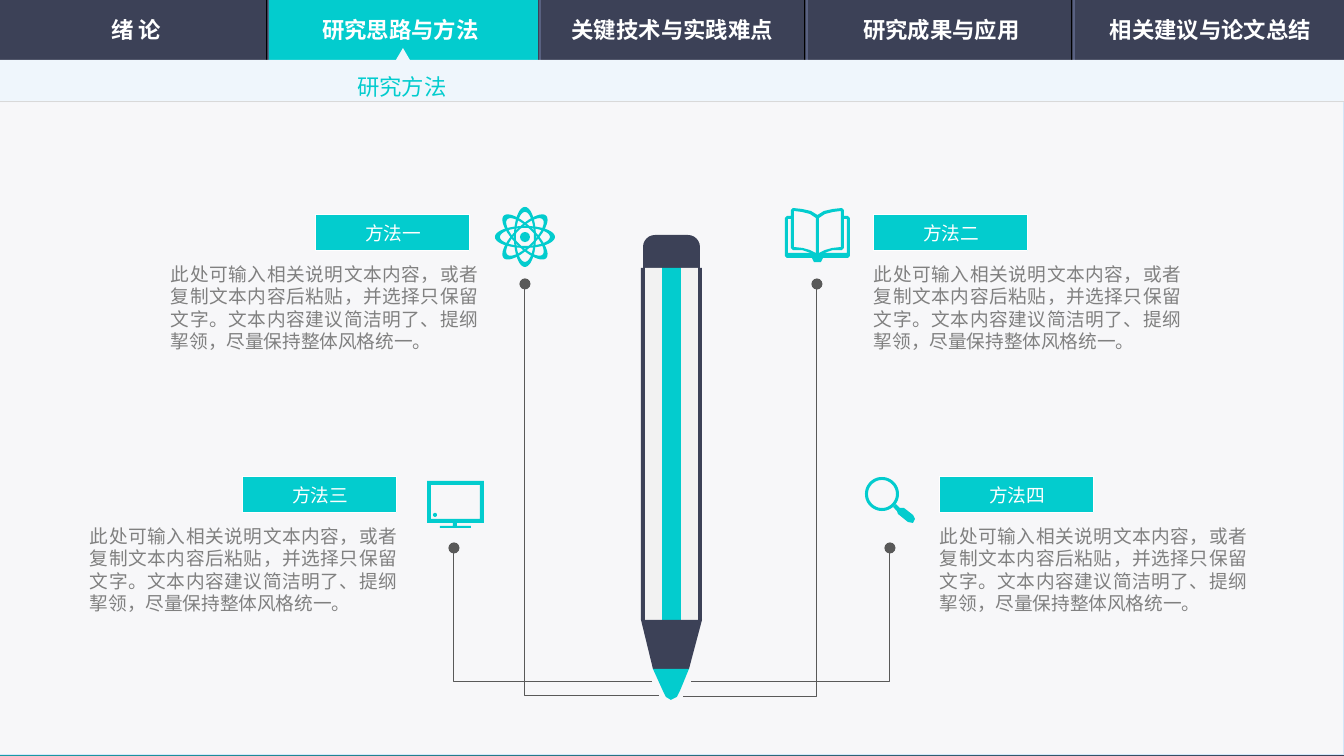
import math
from dataclasses import dataclass

from lxml import etree
from pptx import Presentation
from pptx import util as u
from pptx.dml.color import RGBColor
from pptx.enum import shapes, text
from pptx.oxml import ns

SCALE = 914400 / 134.4  # EMU per px


@dataclass(frozen=True)
class Theme:
    cyan: str = "03CCCE"
    navy: str = "3C4157"
    slate: str = "596181"
    dusk: str = "3B445B"
    panel: str = "F7F7F9"
    panel_edge: str = "D4E7F9"
    band: str = "EFF6FC"
    rule: str = "D9D9D9"
    wire: str = "595959"
    barrel: str = "F2F2F2"
    grey: str = "808080"
    white: str = "FFFFFF"
    black: str = "000000"
    heading: float = 12
    body: float = 10
    cjk: str = "Noto Sans CJK SC"
    body_font: str = "Arial"
    label_font: str = "Arial Narrow"


T = Theme()
RECT = shapes.MSO_SHAPE.RECTANGLE
ROUND = shapes.MSO_SHAPE.ROUNDED_RECTANGLE
OVAL = shapes.MSO_SHAPE.OVAL
CENTER = text.PP_ALIGN.CENTER
MIDDLE = text.MSO_ANCHOR.MIDDLE

# Tab name, left edge of its label
TABS = (("绪 论", 3), ("研究思路与方法", 267), ("关键技术与实践难点", 539),
        ("研究成果与应用", 808), ("相关建议与论文总结", 1077))
DIVIDERS = (267, 538, 805, 1072)

DETAIL = ("此处可输入相关说明文本内容，或者复制文本内容后粘贴，并选择只保留文字。"
          "文本内容建议简洁明了、提纲挈领，尽量保持整体风格统一。")
# Name, label left, detail left, top, lead line from dot to pencil
METHODS = (
    ("方法一", 316, 171, 215, ((525, 284), (525, 696), (659, 696))),
    ("方法二", 874, 874, 215, ((817, 284), (817, 697), (683, 697))),
    ("方法三", 243, 90, 477, ((454, 548), (454, 682), (652, 682))),
    ("方法四", 940, 940, 477, ((890, 548), (890, 682), (691, 682))),
)


def px(n):
    return u.Emu(round(n * SCALE))


def rgb(code):
    return RGBColor.from_string(code)


def paint(sp, fill=None, line=None, width=0.5):
    sp.shadow.inherit = False
    if fill:
        sp.fill.solid()
        sp.fill.fore_color.rgb = rgb(fill)
    else:
        sp.fill.background()
    if line:
        sp.line.color.rgb = rgb(line)
        sp.line.width = u.Pt(width)
    else:
        sp.line.fill.background()


def add_box(s, kind, box, fill=None, line=None, radius=0):
    sp = s.shapes.add_shape(kind, *map(px, box))
    if kind == ROUND:
        sp.adjustments[0] = radius
    paint(sp, fill, line)
    return sp


def add_outline(s, contours, fill=None, line=None, closed=True):
    fb = None
    for points in contours:
        start, *rest = [(px(x), px(y)) for x, y in points]
        if fb is None:
            fb = s.shapes.build_freeform(*start, scale=1.0)
        else:
            fb.move_to(*start)
        fb.add_line_segments(rest, close=closed)
    sp = fb.convert_to_shape()
    paint(sp, fill, line)
    return sp


def add_line(s, x1, y1, x2, y2, color, width=0.5):
    cx = s.shapes.add_connector(shapes.MSO_CONNECTOR.STRAIGHT, *map(px, (x1, y1, x2, y2)))
    cx.line.color.rgb = rgb(color)
    cx.line.width = u.Pt(width)
    etree.SubElement(cx._element.spPr, ns.qn("a:effectLst"))


def write(sp, words, color, font, frame=None, para=None):
    tf = sp.text_frame
    for key, value in ({"word_wrap": True} | (frame or {})).items():
        setattr(tf, key, value)
    p = tf.paragraphs[0]
    for key, value in (para or {}).items():
        setattr(p, key, value)
    r = p.add_run()
    r.text = words
    r.font.color.rgb = rgb(color)
    for key, value in font.items():
        setattr(r.font, key, value)
    etree.SubElement(r._r.get_or_add_rPr(), ns.qn("a:ea"), typeface=T.cjk)


def ellipse(cx, cy, rx, ry, turn=0, steps=48):
    c, d = math.cos(math.radians(turn)), math.sin(math.radians(turn))
    angles = [2 * math.pi * i / steps for i in range(steps)]
    ring = [(rx * math.cos(a), ry * math.sin(a)) for a in angles]
    return [(cx + x * c - y * d, cy + x * d + y * c) for x, y in ring]


def corners(x1, y1, x2, y2):
    return [(x1, y1), (x2, y1), (x2, y2), (x1, y2)]


def mirror(points, axis=817.5):
    return [(2 * axis - x, y) for x, y in reversed(points)]


def add_header(s):
    add_box(s, RECT, (0, 0, 1344, 60), T.navy)
    add_box(s, RECT, (0, 60, 1344, 695), T.panel, T.panel_edge)
    for x in DIVIDERS:
        add_line(s, x, 0, x, 60, T.black)
        add_line(s, x + 2, 0, x + 2, 60, T.slate, 0.75)
    add_box(s, RECT, (269, 0, 269, 60), T.cyan)
    # Sub-title band with a pointer into the active tab
    add_outline(s, [[(403, 48), (410, 60), (1344, 60), (1344, 102),
                     (0, 102), (0, 60), (396, 60)]], T.band)
    add_line(s, 0, 102, 1344, 102, T.rule)
    for name, x in TABS:
        sp = add_box(s, ROUND, (x, 9, 267, 42))
        write(sp, name, T.white, {"size": u.Pt(T.heading), "name": T.cjk, "bold": True},
              {"vertical_anchor": MIDDLE}, {"alignment": CENTER})
    sp = s.shapes.add_textbox(*map(px, (344, 55, 118, 50)))
    write(sp, "研究方法", T.cyan, {"size": u.Pt(T.heading), "name": T.cjk},
          {"vertical_anchor": MIDDLE, "word_wrap": False}, {"line_spacing": 1.5})


def add_method(s, name, label_x, detail_x, top, lead):
    sp = add_outline(s, [lead], line=T.wire, closed=False)
    etree.SubElement(sp.line._get_or_add_ln(), ns.qn("a:headEnd"), type="oval")
    sp = s.shapes.add_textbox(*map(px, (detail_x, top + 48, 307, 90)))
    margins = {f"margin_{side}": 0 for side in ("left", "top", "right", "bottom")}
    write(sp, DETAIL, T.grey, {"size": u.Pt(T.body), "name": T.body_font}, margins,
          {"alignment": text.PP_ALIGN.JUSTIFY, "line_spacing": u.Pt(12)})
    sp = add_box(s, ROUND, (label_x, top, 154, 36), T.cyan, T.white)
    write(sp, name, T.white, {"size": u.Pt(T.body), "name": T.label_font},
          {"vertical_anchor": MIDDLE}, {"alignment": CENTER})


def add_icons(s):
    # Atom
    for turn in (0, 90, 45, -45):
        add_outline(s, [ellipse(525, 237, 11, 30, turn), ellipse(525, 237, 9, 25, turn)], T.cyan)
    add_box(s, OVAL, (520, 232, 10, 10), T.cyan)
    # Book: right half, mirrored at the spine
    cover = [(817.5, 215), (824, 211), (833, 209), (842, 208), (844, 210), (844, 216),
             (848, 216), (850, 218), (850, 256), (848, 258), (823, 258), (821, 262), (817.5, 262)]
    page = [(819, 218), (825, 214), (833, 212), (841, 211), (841, 247),
            (832, 248), (825, 250), (819, 253)]
    margin = [(844, 219), (847, 219), (847, 253), (824, 253), (833, 250), (842, 250), (844, 248)]
    add_outline(s, [cover + mirror(cover), page, mirror(page), margin, mirror(margin)], T.cyan)
    # Monitor
    add_outline(s, [corners(427, 481, 484, 523), corners(431, 485, 480, 519),
                    ellipse(435, 515, 2, 2), corners(453, 523, 457, 526),
                    corners(440, 526, 471, 528)], T.cyan)
    # Magnifier
    add_outline(s, [ellipse(882, 494, 17, 17), ellipse(882, 494, 14, 14)], T.cyan)
    add_outline(s, [[(893, 507), (896, 504), (900, 508), (904, 508), (913, 515), (915, 519),
                     (913, 523), (908, 522), (898, 514), (897, 511)]], T.cyan)


def add_pencil(s):
    add_box(s, ROUND, (643, 235, 57, 101), T.navy, radius=0.21)
    for x, w, color in ((641, 61, T.navy), (645, 17, T.barrel),
                        (681, 17, T.barrel), (662, 19, T.cyan)):
        add_box(s, RECT, (x, 268, w, 352), color)
    add_outline(s, [[(641, 620), (653, 669), (689, 669), (702, 620)]], T.navy)
    add_outline(s, [[(653, 669), (663, 691), (666, 697), (671, 700),
                     (677, 697), (680, 691), (689, 669)]], T.cyan)


def main():
    prs = Presentation()
    prs.slide_width, prs.slide_height = px(1344), px(756)
    s = prs.slides.add_slide(prs.slide_layouts[6])
    # Background gradient
    bg = s.background.fill
    bg.gradient()
    bg.gradient_angle = 315
    for stop, color in zip(bg.gradient_stops, (T.cyan, T.dusk)):
        stop.color.rgb = rgb(color)
    add_header(s)
    add_icons(s)
    for method in METHODS:
        add_method(s, *method)
    add_pencil(s)
    prs.save("out.pptx")


if __name__ == "__main__":
    main()
